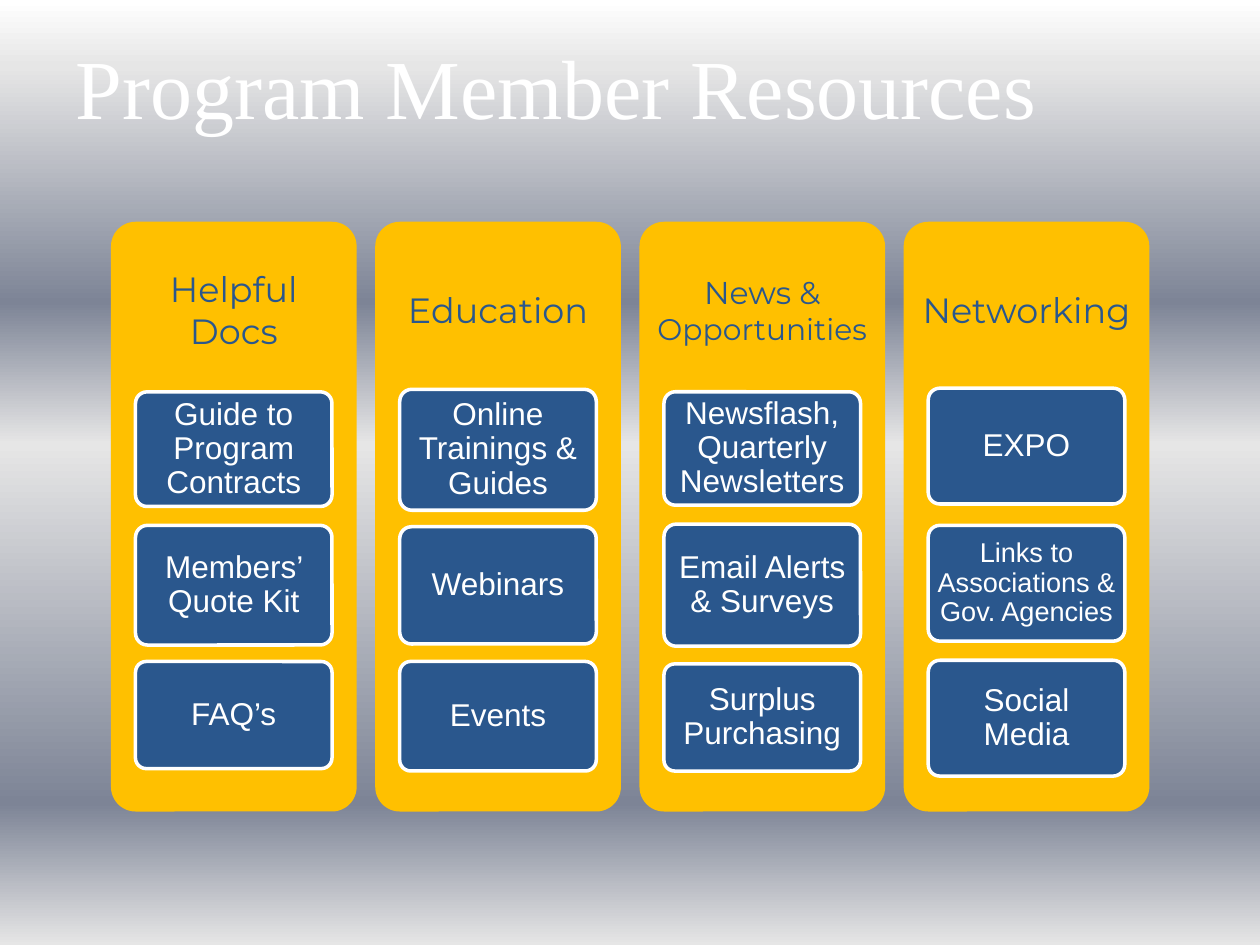
from lxml.etree import SubElement
from pptx import Presentation
from pptx.dml.color import RGBColor
from pptx.enum.shapes import MSO_SHAPE
from pptx.enum.text import MSO_ANCHOR, MSO_AUTO_SIZE, PP_ALIGN
from pptx.oxml.ns import qn
from pptx.util import Pt

COLORS = {"gold": "FFC000", "blue": "2A578D", "white": "FFFFFF"}
BACKGROUND = [(0, "FFFFFF"), (7, "E6E6E6"), (32, "7D8496"),
              (47, "E6E6E6"), (85, "7D8496"), (100, "E6E6E6")]

# Column grid
LEFT, TOP, STEP = 63.4, 126.7, 151
PILLAR_W, PILLAR_H, HEADING_H = 140.4, 337, 100.8
BLOCK_W = 112.3

# Heading paragraphs as lists of (text, size); blocks as (text, top, height, size)
COLUMNS = [
    ([[("Helpful", 20)], [("Docs", 20)]],
     [("Guide to Program Contracts", 223.9, 65.5, 18),
      ("Members’ Quote Kit", 300.2, 68.4, 18),
      ("FAQ’s", 378, 61.2, 18)]),
    ([[("Education", 20)]],
     [("Online Trainings & Guides", 222.5, 69.1, 18),
      ("Webinars", 301, 67, 18),
      ("Events", 378, 62.6, 18)]),
    ([[("News & ", 18), ("Opportunities", 17)]],
     [("Newsflash, Quarterly Newsletters", 223.9, 64.8, 18),
      ("Email Alerts & Surveys", 299.5, 69.8, 18),
      ("Surplus Purchasing", 379.4, 61.2, 18)]),
    ([[("Networking", 20)]],
     [("EXPO", 221.8, 66.2, 18),
      ("Links to Associations & Gov. Agencies", 300.2, 66.2, 15.5),
      ("Social Media", 377.3, 66.2, 18)]),
]


def rgb(name):
    return RGBColor.from_string(COLORS[name])


class Deck:
    title_font, heading_font, block_font = "Times New Roman", "Montserrat", "Arial"

    def __init__(self, prs):
        self.s = prs.slides.add_slide(prs.slide_layouts[5])

    def background(self, stops):
        fill = self.s.background.fill
        fill.gradient()
        fill.gradient_angle = 270
        gs_list = next(self.s.element.iter(qn("a:gsLst")))
        for gs in list(gs_list):
            gs_list.remove(gs)
        for pos, color in stops:
            gs = SubElement(gs_list, qn("a:gs"), pos=str(pos * 1000))
            SubElement(gs, qn("a:srgbClr"), val=color)

    def style(self, p, font, color, align=PP_ALIGN.CENTER, size=None):
        p.alignment = align
        p.font.name = font
        p.font.color.rgb = rgb(color)
        if size:
            p.font.size = Pt(size)

    def frame(self, tf, inset_x, inset_y, anchor=MSO_ANCHOR.MIDDLE):
        tf.word_wrap = True
        tf.auto_size = MSO_AUTO_SIZE.NONE
        tf.vertical_anchor = anchor
        tf.margin_left = tf.margin_right = Pt(inset_x)
        tf.margin_top = tf.margin_bottom = Pt(inset_y)

    def title(self, text, x, y, w, h):
        sp = self.s.shapes.title
        sp.left, sp.top, sp.width, sp.height = Pt(x), Pt(y), Pt(w), Pt(h)
        tf = sp.text_frame
        tf.text = text
        self.frame(tf, 7.2, 8.4, MSO_ANCHOR.TOP)
        self.style(tf.paragraphs[0], self.title_font, "white", PP_ALIGN.LEFT, 48)

    def panel(self, x, y, w, h, color):
        sp = self.s.shapes.add_shape(MSO_SHAPE.ROUNDED_RECTANGLE,
                                     Pt(x), Pt(y), Pt(w), Pt(h))
        sp.adjustments[0] = 0.1
        sp.shadow.inherit = False
        sp.fill.solid()
        sp.fill.fore_color.rgb = rgb(color)
        sp.line.fill.background()
        return sp

    def heading(self, paragraphs, x, y, w, h):
        tf = self.s.shapes.add_textbox(Pt(x), Pt(y), Pt(w), Pt(h)).text_frame
        self.frame(tf, 5.5, 5.5)
        for i, runs in enumerate(paragraphs):
            p = tf.add_paragraph() if i else tf.paragraphs[0]
            self.style(p, self.heading_font, "blue")
            for text, size in runs:
                r = p.add_run()
                r.text = text
                r.font.size = Pt(size)

    def block(self, text, x, y, w, h, size):
        sp = self.panel(x, y, w, h, "blue")
        sp.line.color.rgb = rgb("white")
        sp.line.width = Pt(2)
        tf = sp.text_frame
        tf.text = text
        self.frame(tf, size * 0.19, size * 0.14)
        p = tf.paragraphs[0]
        p.line_spacing = 0.9
        self.style(p, self.block_font, "white", size=size)


def main():
    prs = Presentation()
    prs.slide_width, prs.slide_height = Pt(720), Pt(540)
    deck = Deck(prs)
    deck.background(BACKGROUND)
    deck.title("Program Member Resources", 36, 12.2, 635.8, 36)

    # Pillars with their headings and resource blocks
    for i, (heading, blocks) in enumerate(COLUMNS):
        x = LEFT + i * STEP
        deck.panel(x, TOP, PILLAR_W, PILLAR_H, "gold")
        deck.heading(heading, x, TOP, PILLAR_W, HEADING_H)
        for text, y, h, size in blocks:
            deck.block(text, x + (PILLAR_W - BLOCK_W) / 2, y, BLOCK_W, h, size)

    prs.save("out.pptx")


if __name__ == "__main__":
    main()
